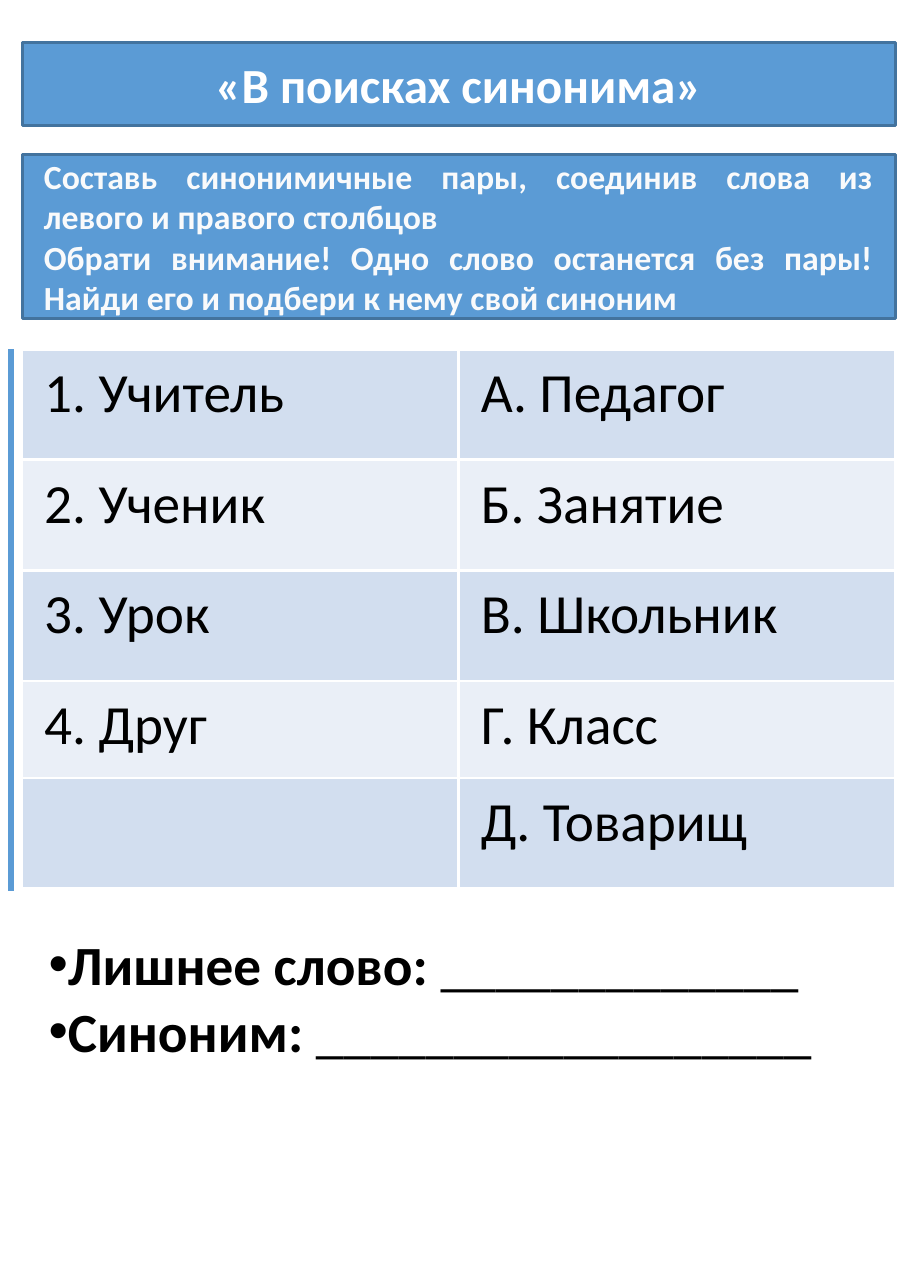
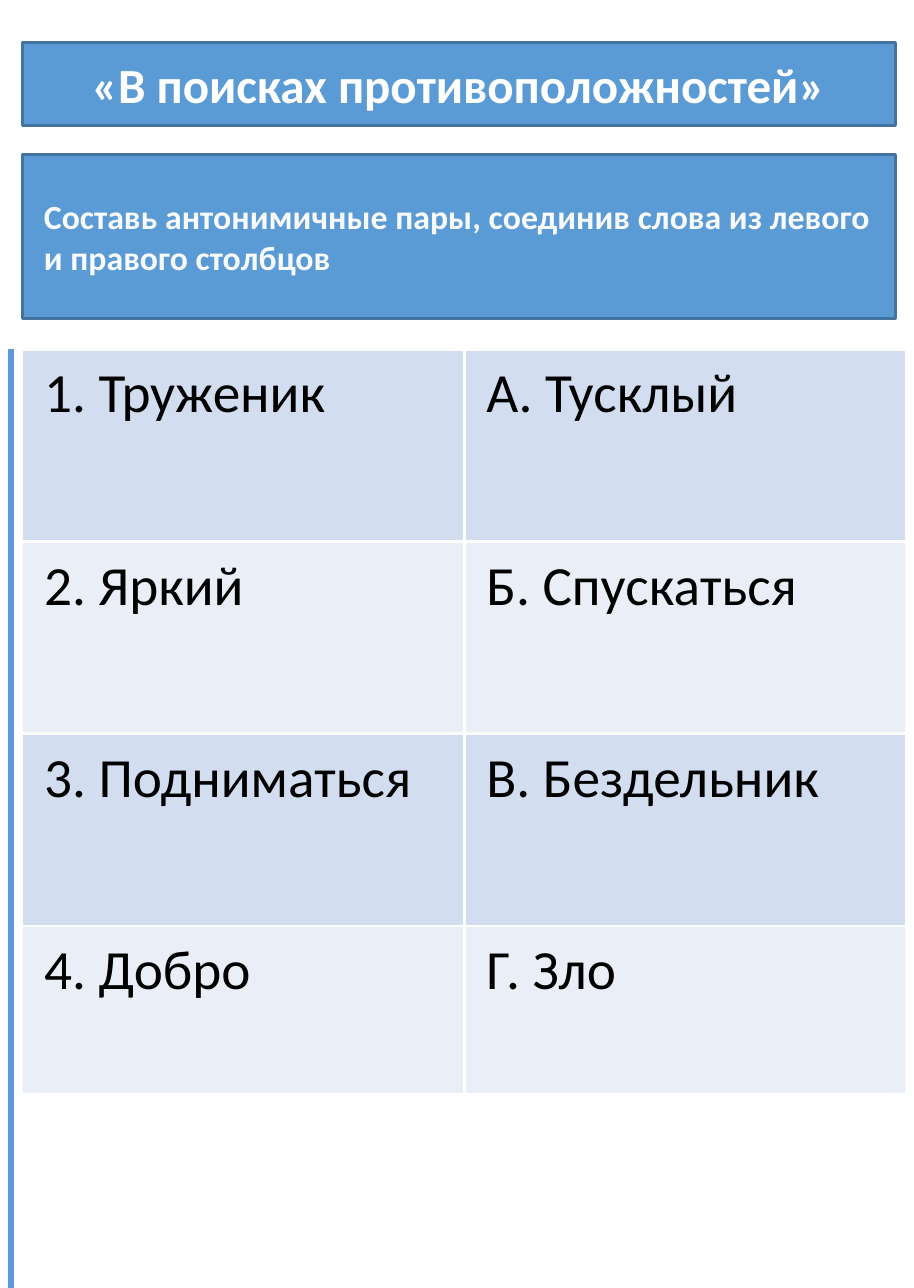
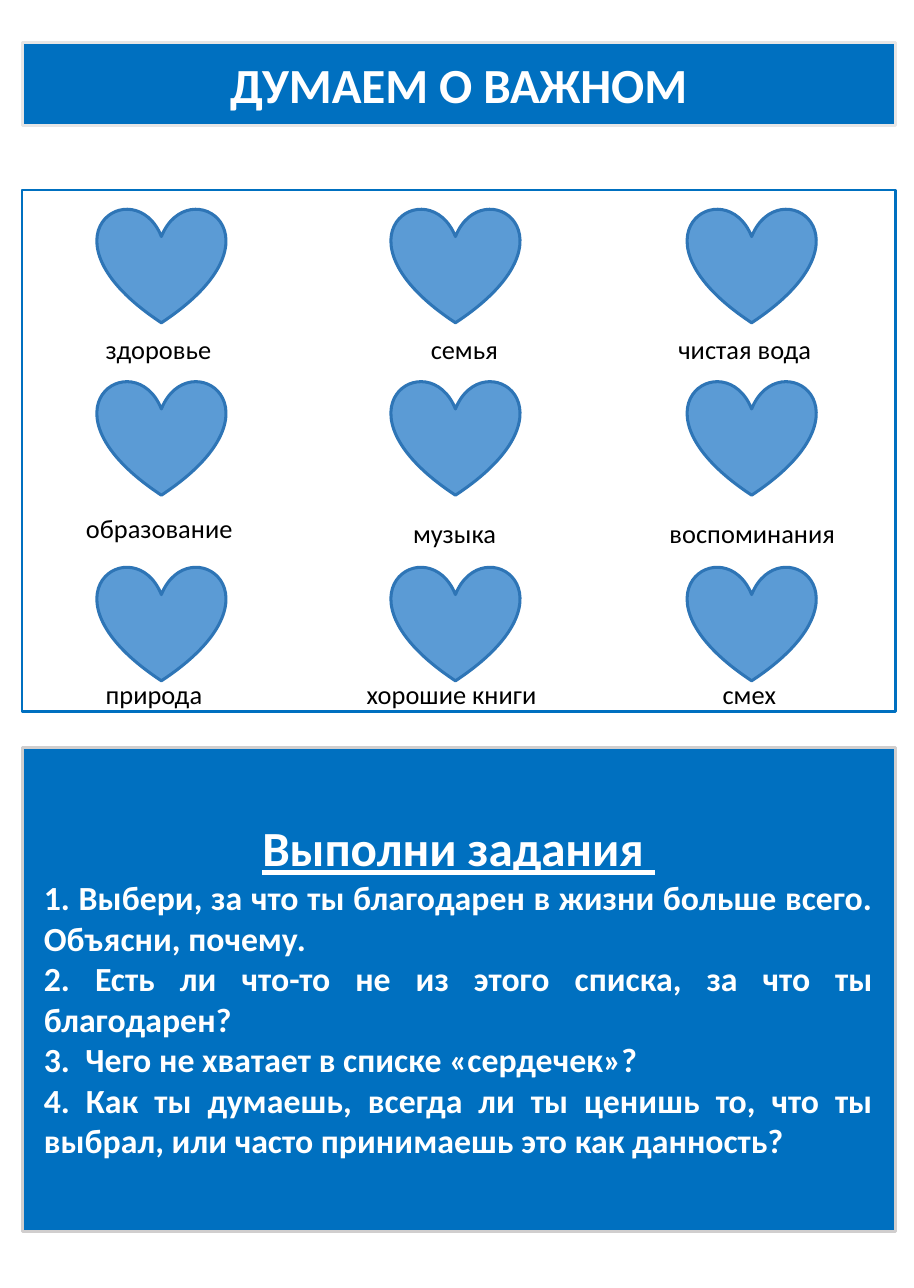
from pptx import Presentation
from pptx.dml.color import RGBColor as RGB
from pptx.enum.shapes import MSO_CONNECTOR as Link, MSO_SHAPE as Kind
from pptx.enum.text import MSO_ANCHOR as Anchor, MSO_AUTO_SIZE as Auto, PP_ALIGN as Align
from pptx.oxml import parse_xml
from pptx.oxml.ns import nsdecls
from pptx.util import Cm, Inches, Pt

# Shared look; the page is A6
FONT = "Calibri"
WHITE, BLACK, PALE = RGB(255, 255, 255), RGB(0, 0, 0), RGB(0xF9, 0xFA, 0xFB)
SKY, STEEL = RGB(0x5B, 0x9B, 0xD5), RGB(0x43, 0x73, 0x9E)
BLUE, NAVY = RGB(0, 0x70, 0xC0), RGB(0x2E, 0x75, 0xB6)
MIST, GREY = RGB(0xE7, 0xE6, 0xE6), RGB(0xD0, 0xCE, 0xCE)
BANDS = RGB(0xD2, 0xDE, 0xEF), RGB(0xEA, 0xEF, 0xF7)
WIDE, HIGH = Cm(10.5), Cm(14.8)
LEFT, SPAN = 0.1, 3.95
HEAD = dict(size=Pt(16), bold=True)
TASK = dict(size=Pt(11), bold=True)

# Content: each paragraph is (text, alignment, format)
PAIRS = [
    dict(title="«В поисках синонима»", layout=1, end=4.03, width=3.95,
         rows=[0.5, 0.5, 0.5, 0.44, 0.5],
         task=[("Составь синонимичные пары, соединив слова из левого и правого столбцов",
                Align.JUSTIFY, TASK),
               ("Обрати внимание! Одно слово останется без пары! "
                "Найди его и подбери к нему свой синоним", Align.JUSTIFY, TASK)],
         words=[("1. Учитель", "А. Педагог"), ("2. Ученик", "Б. Занятие"),
                ("3. Урок", "В. Школьник"), ("4. Друг", "Г. Класс"),
                ("", "Д. Товарищ")],
         blanks=[("Лишнее слово: ", 13), ("Синоним: ", 18)]),
    dict(title="«В поисках противоположностей»", layout=5, end=5.83, width=4,
         rows=[0.87, 0.87, 0.87, 0.76],
         task=[("Составь антонимичные пары, соединив слова из левого и правого столбцов",
                Align.LEFT, TASK)],
         words=[("1. Труженик", "А. Тусклый"), ("2. Яркий", "Б. Спускаться"),
                ("3. Подниматься", "В. Бездельник"), ("4. Добро", "Г. Зло")],
         blanks=[]),
]
THINK = "ДУМАЕМ О ВАЖНОМ"
COLS, ROWS = (0.44, 1.77, 3.11), (0.94, 1.72, 2.56)
VALUES = [  # label, left, top, width
    ("здоровье", 0.38, 1.46, 0.7), ("семья", 1.85, 1.46, 0.51),
    ("чистая вода", 2.97, 1.46, 0.86), ("образование", 0.29, 2.27, 0.89),
    ("музыка", 1.77, 2.29, 0.7), ("воспоминания", 2.93, 2.29, 1),
    ("природа", 0.38, 3.02, 0.7), ("хорошие книги", 1.56, 3.02, 1.02),
    ("смех", 3.17, 3.02, 0.46),
]
TASKS = [("Выполни задания ", Align.CENTER, dict(HEAD, underline=True))] + [
    (text, Align.JUSTIFY, TASK) for text in (
        "1. Выбери, за что ты благодарен в жизни больше всего. Объясни, почему.",
        "2. Есть ли что-то не из этого списка, за что ты благодарен? ",
        "3.  Чего не хватает в списке «сердечек»?",
        "4. Как ты думаешь, всегда ли ты ценишь то, что ты выбрал, "
        "или часто принимаешь это как данность?")]


def place(shape, *box):
    for name, size in zip(("left", "top", "width", "height"), box):
        setattr(shape, name, Inches(size))


def write(para, text, color=BLACK, **form):
    run = para.add_run()
    run.text = text
    run.font.color.rgb = color
    for name, value in dict(form, name=FONT).items():
        setattr(run.font, name, value)


def paint(shape, fill, edge, width=1):
    shape.shadow.inherit = False
    if fill is None:
        shape.fill.background()
    else:
        shape.fill.solid()
        shape.fill.fore_color.rgb = fill
    shape.line.color.rgb = edge
    shape.line.width = Pt(width)


def draw(slide, kind, box, fill, edge, width=1):
    shape = slide.shapes.add_shape(kind, *map(Inches, box))
    paint(shape, fill, edge, width)
    return shape


def fill_in(shape, paras, color=WHITE):
    frame = shape.text_frame
    frame.word_wrap, frame.auto_size = True, Auto.NONE
    frame.vertical_anchor = Anchor.MIDDLE
    for i, (text, align, form) in enumerate(paras):
        para = frame.add_paragraph() if i else frame.paragraphs[0]
        para.alignment = align
        write(para, text, color, **form)


def start(deck, layout, title, fill, edge):
    slide = deck.slides.add_slide(deck.slide_layouts[layout])
    band = slide.shapes.title
    place(band, LEFT, 0.19, SPAN, 0.38)
    paint(band, fill, edge)
    fill_in(band, [(title, Align.CENTER, HEAD)])
    return slide


def border(cell):
    props = cell._tc.get_or_add_tcPr()
    for i, side in enumerate(("lnL", "lnR", "lnT", "lnB")):
        props.insert(i, parse_xml(
            f'<a:{side} {nsdecls("a")} w="12700"><a:solidFill>'
            f'<a:srgbClr val="{WHITE}"/></a:solidFill></a:{side}>'))


def add_words(slide, top, width, heights, words):
    grid = slide.shapes.add_table(
        len(words), 2, *map(Inches, (LEFT, top, width, sum(heights)))).table
    grid.first_row = grid.horz_banding = False
    for col in grid.columns:
        col.width = Inches(width / 2)
    for r, pair in enumerate(words):
        grid.rows[r].height = Inches(heights[r])
        for c, text in enumerate(pair):
            cell = grid.cell(r, c)
            cell.fill.solid()
            cell.fill.fore_color.rgb = BANDS[r % 2]
            border(cell)
            if text:
                write(cell.text_frame.paragraphs[0], text, size=Pt(18))


def add_blanks(body, blanks):
    place(body, 0.12, 4.16, 3.9, 1.31)
    frame = body.text_frame
    frame.auto_size = Auto.NONE
    for i, (label, count) in enumerate(blanks):
        para = frame.add_paragraph() if i else frame.paragraphs[0]
        para.space_before = Pt(0)
        props = para._p.get_or_add_pPr()
        for name in ("marL", "indent"):
            props.set(name, "0")
        write(para, label, size=Pt(18), bold=True)
        write(para, "_" * count, size=Pt(18), bold=False)


def pair_slide(deck, data):
    slide = start(deck, data["layout"], data["title"], SKY, STEEL)
    box = draw(slide, Kind.RECTANGLE, (LEFT, 0.7, SPAN, 0.74), SKY, STEEL)
    fill_in(box, data["task"], PALE)
    # Side rule and table share a top edge
    top = 1.58
    rule = slide.shapes.add_connector(
        Link.STRAIGHT, *map(Inches, (0.05, top, 0.05, data["end"])))
    rule.line.color.rgb = SKY
    rule.line.width = Pt(2.25)
    rule._element.spPr.append(parse_xml(f'<a:effectLst {nsdecls("a")}/>'))
    add_words(slide, top, data["width"], data["rows"], data["words"])
    if data["blanks"]:
        add_blanks(slide.placeholders[1], data["blanks"])


def heart_slide(deck):
    slide = start(deck, 5, THINK, BLUE, MIST)
    box = draw(slide, Kind.RECTANGLE, (LEFT, 3.38, SPAN, 2.19), BLUE, GREY)
    fill_in(box, TASKS)
    draw(slide, Kind.RECTANGLE, (LEFT, 0.86, SPAN, 2.36), None, BLUE, 0.75)
    # Hearts and their labels
    for i, (text, left, top, width) in enumerate(VALUES):
        row, col = divmod(i, len(COLS))
        draw(slide, Kind.HEART, (COLS[col], ROWS[row], 0.58, 0.52), SKY, NAVY)
        label = slide.shapes.add_textbox(*map(Inches, (left, top, width, 0.24)))
        label.text_frame.word_wrap = True
        write(label.text_frame.paragraphs[0], text, size=Pt(8.6))


def main():
    deck = Presentation()
    deck.slide_width, deck.slide_height = WIDE, HIGH
    for data in PAIRS:
        pair_slide(deck, data)
    heart_slide(deck)
    deck.save("out.pptx")


if __name__ == "__main__":
    main()
